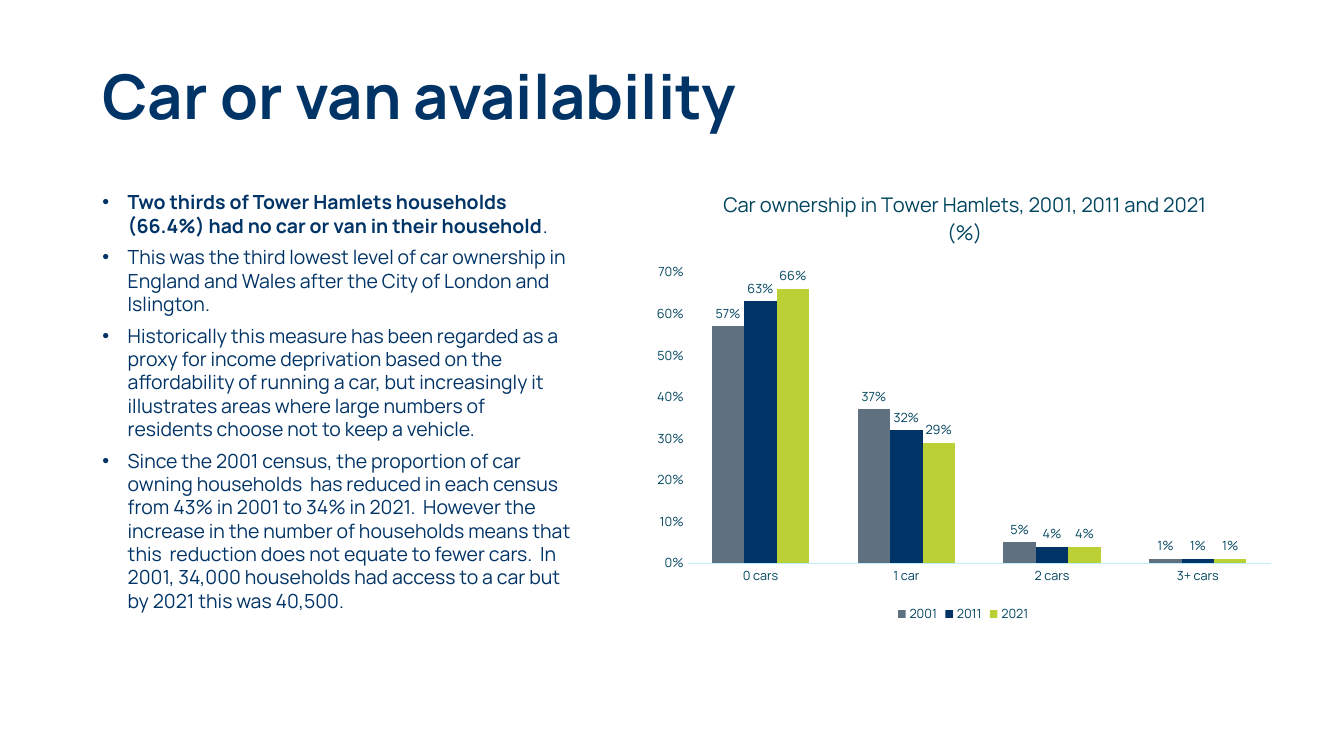
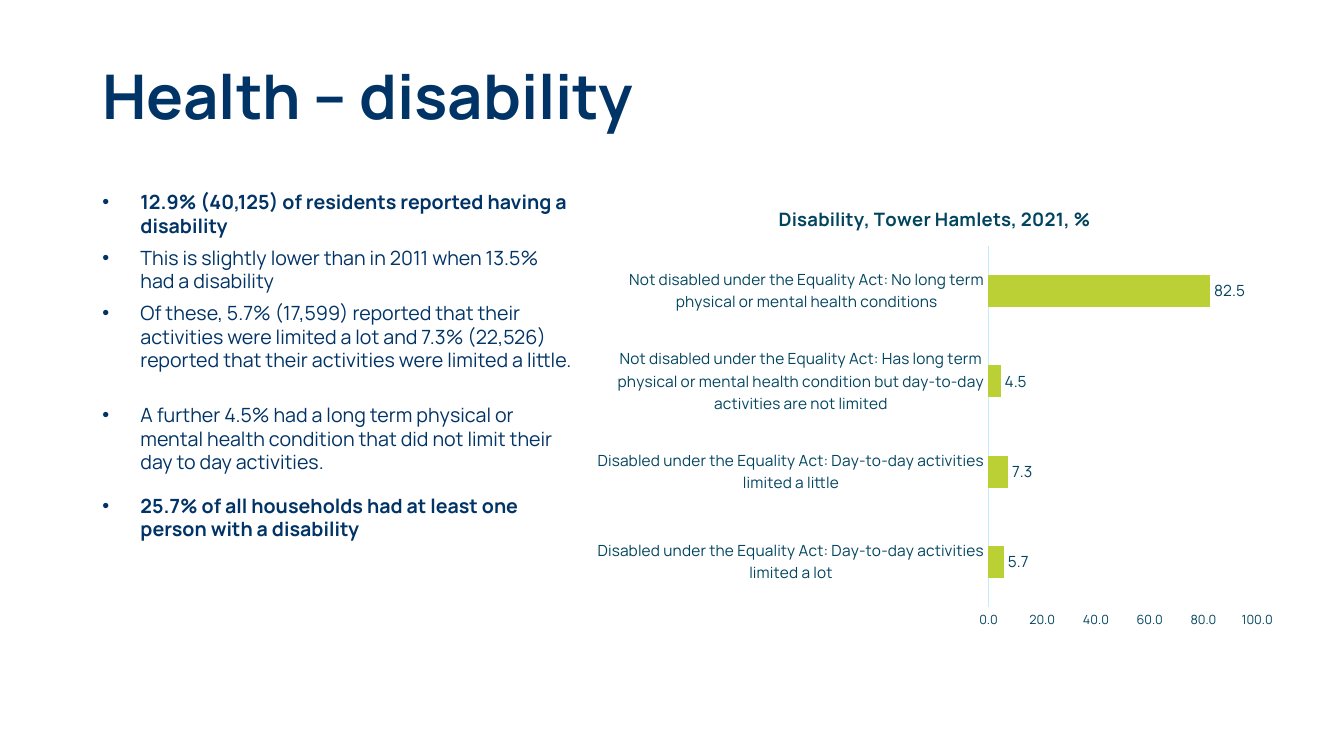
from dataclasses import dataclass

from lxml.etree import SubElement
from pptx import Presentation
from pptx.chart.data import CategoryChartData
from pptx.dml.color import RGBColor
from pptx.enum.chart import XL_CHART_TYPE, XL_LABEL_POSITION, XL_LEGEND_POSITION, XL_TICK_MARK
from pptx.enum.text import MSO_ANCHOR, MSO_AUTO_SIZE, PP_ALIGN
from pptx.oxml import parse_xml
from pptx.oxml.ns import nsdecls, qn
from pptx.util import Cm, Pt

FONT = "Manrope"
COLOURS = {
    "navy": "003366",
    "teal": "00445E",
    "pale": "C1EEFF",
    "grey": "5F7180",
    "lime": "BBD034",
}


@dataclass(frozen=True)
class Span:
    text: str
    bold: bool = False


@dataclass(frozen=True)
class Bullet:
    spans: tuple[Span, ...]
    before: float = 6
    after: float = 0


@dataclass(frozen=True)
class BulletList:
    bullets: tuple[Bullet, ...]
    size: float
    indent: float


@dataclass(frozen=True)
class Series:
    name: str
    values: tuple[float, ...]
    colour: str


@dataclass(frozen=True)
class ChartPanel:
    kind: XL_CHART_TYPE
    place: tuple[float, float, float, float]
    title: str
    title_size: float
    title_bold: bool
    title_corner: tuple[float, float]
    plot_area: tuple[float, float, float, float]
    categories: tuple[str, ...]
    series: tuple[Series, ...]
    number_format: str
    maximum: float
    step: float
    gap: int
    label_size: float
    category_size: float
    has_legend: bool = False


@dataclass(frozen=True)
class Page:
    title: str
    body: BulletList
    panel: ChartPanel


PAGES = (
    Page(
        "Car or van availability",
        BulletList(
            (
                Bullet((
                    Span("Two thirds of Tower Hamlets households (66.4%) had no car or van in their household", True),
                    Span("."),
                ), before=0),
                Bullet((Span("This was the third lowest level of car ownership in England and Wales after "
                             "the City of London and Islington."),)),
                Bullet((Span("Historically this measure has been regarded as a proxy for income deprivation "
                             "based on the affordability of running a car, but increasingly it illustrates "
                             "areas where large numbers of residents choose not to keep a vehicle."),)),
                Bullet((Span("Since the 2001 census, the proportion of car owning households  has reduced in "
                             "each census from 43% in 2001 to 34% in 2021.  However the increase in the number "
                             "of households means that this  reduction does not equate to fewer cars.  In 2001, "
                             "34,000 households had access to a car but by 2021 this was 40,500."),)),
            ),
            size=13.9,
            indent=0.64,
        ),
        ChartPanel(
            kind=XL_CHART_TYPE.COLUMN_CLUSTERED,
            place=(16.2, 4.34, 16.15, 11.46),
            title="Car ownership in Tower Hamlets, 2001, 2011 and 2021 (%)",
            title_size=14.4,
            title_bold=False,
            title_corner=(0.12, 0.03),
            plot_area=(0.07, 0.22, 0.91, 0.64),
            categories=("0 cars", "1 car", "2 cars", "3+ cars"),
            series=(
                Series("2001", (0.57, 0.37, 0.05, 0.01), "grey"),
                Series("2011", (0.63, 0.32, 0.04, 0.01), "navy"),
                Series("2021", (0.66, 0.29, 0.04, 0.01), "lime"),
            ),
            number_format="0%",
            maximum=0.7,
            step=0.1,
            gap=150,
            label_size=9,
            category_size=9,
            has_legend=True,
        ),
    ),
    Page(
        "Health – disability",
        BulletList(
            (
                Bullet((Span("12.9% (40,125) of residents reported having a disability", True),), before=0),
                Bullet((Span("This is slightly lower than in 2011 when 13.5% had a disability"),)),
                Bullet((Span("Of these, 5.7% (17,599) reported that their activities were limited a lot and "
                             "7.3% (22,526) reported that their activities were limited a little."),)),
                Bullet((Span("A further 4.5% had a long term physical or mental health condition that did "
                             "not limit their day to day activities."),), before=22.5, after=8),
                Bullet((Span("25.7% of all households had at least one person with a disability", True),)),
            ),
            size=14,
            indent=0.96,
        ),
        ChartPanel(
            kind=XL_CHART_TYPE.BAR_CLUSTERED,
            place=(14.7, 4.67, 17.73, 11.38),
            title="Disability, Tower Hamlets, 2021, %",
            title_size=13.2,
            title_bold=True,
            title_corner=(0.273, 0.034),
            plot_area=(0.576, 0.134, 0.382, 0.8),
            categories=(
                "Disabled under the Equality Act: Day-to-day activities limited a lot",
                "Disabled under the Equality Act: Day-to-day activities limited a little",
                "Not disabled under the Equality Act: Has long term physical or mental health condition "
                "but day-to-day activities are not limited",
                "Not disabled under the Equality Act: No long term physical or mental health conditions",
            ),
            series=(Series("Series 1", (5.7, 7.3, 4.5, 82.5), "lime"),),
            number_format="#,##0.0",
            maximum=100,
            step=20,
            gap=182,
            label_size=11,
            category_size=11,
        ),
    ),
)


def colour(name: str) -> RGBColor:
    return RGBColor.from_string(COLOURS[name])


def style_font(font, size: float, name: str, bold: bool = False) -> None:
    font.name = FONT
    font.size = Pt(size)
    font.bold = bold
    font.color.rgb = colour(name)


def write_title(slide, text: str) -> None:
    title = slide.shapes.title
    title.left, title.top, title.width, title.height = Cm(2.33), Cm(0.66), Cm(27.16), Cm(3.68)
    frame = title.text_frame
    frame.auto_size = MSO_AUTO_SIZE.NONE
    frame.vertical_anchor = MSO_ANCHOR.MIDDLE
    para = frame.paragraphs[0]
    para.alignment = PP_ALIGN.LEFT
    para.line_spacing = 0.9
    span = para.add_run()
    span.text = text
    style_font(span.font, 44, "navy", True)


def write_bullets(slide, body: BulletList) -> None:
    box = slide.shapes.add_textbox(Cm(2.33), Cm(4.67), Cm(12.37), Cm(12.42))
    frame = box.text_frame
    frame.word_wrap = True
    for index, bullet in enumerate(body.bullets):
        para = frame.add_paragraph() if index else frame.paragraphs[0]
        properties = para._p.get_or_add_pPr()
        properties.set("marL", str(Cm(body.indent)))
        properties.set("indent", str(-Cm(body.indent)))
        SubElement(properties, qn("a:buFont")).set("typeface", "Arial")
        SubElement(properties, qn("a:buChar")).set("char", "•")
        para.line_spacing = 1.0
        para.space_before = Pt(bullet.before)
        para.space_after = Pt(bullet.after)
        for part in bullet.spans:
            span = para.add_run()
            span.text = part.text
            style_font(span.font, body.size, "navy", part.bold)


def manual_layout(values: tuple[float, ...], inner: bool = False):
    target = '<c:layoutTarget val="inner"/>' if inner else ""
    modes = "".join(f'<c:{axis}Mode val="edge"/>' for axis in "xy")
    sizes = "".join(f'<c:{key} val="{value}"/>' for key, value in zip("xywh", values))
    return parse_xml(
        f'<c:layout {nsdecls("c")}><c:manualLayout>{target}{modes}{sizes}</c:manualLayout></c:layout>'
    )


def place_chart_part(element, layout, position: int) -> None:
    for existing in element.findall(qn("c:layout")):
        element.remove(existing)
    element.insert(position, layout)


def draw_chart(slide, panel: ChartPanel) -> None:
    data = CategoryChartData(number_format=panel.number_format)
    data.categories = panel.categories
    for series in panel.series:
        data.add_series(series.name, series.values)
    chart = slide.shapes.add_chart(panel.kind, *map(Cm, panel.place), data).chart
    style_font(chart.font, panel.label_size, "teal")

    chart.has_title = True
    para = chart.chart_title.text_frame.paragraphs[0]
    span = para.add_run()
    span.text = panel.title
    style_font(span.font, panel.title_size, "teal", panel.title_bold)
    place_chart_part(chart.chart_title._element, manual_layout(panel.title_corner), 1)
    plot_area = chart._chartSpace.chart.plotArea
    place_chart_part(plot_area, manual_layout(panel.plot_area, True), 0)

    chart.has_legend = panel.has_legend
    if panel.has_legend:
        chart.legend.position = XL_LEGEND_POSITION.BOTTOM
        chart.legend.include_in_layout = False
        style_font(chart.legend.font, 9, "teal")

    for axis, size in ((chart.category_axis, panel.category_size), (chart.value_axis, 9)):
        axis.has_major_gridlines = False
        axis.major_tick_mark = XL_TICK_MARK.NONE
        axis.minor_tick_mark = XL_TICK_MARK.NONE
        style_font(axis.tick_labels.font, size, "teal")
    chart.category_axis.format.line.color.rgb = colour("pale")
    chart.category_axis.format.line.width = Pt(0.75)
    values = chart.value_axis
    values.format.line.fill.background()
    values.minimum_scale = 0
    values.maximum_scale = panel.maximum
    values.major_unit = panel.step
    values.tick_labels.number_format = panel.number_format
    values.tick_labels.number_format_is_linked = False

    plot = chart.plots[0]
    plot.vary_by_categories = False
    plot.gap_width = panel.gap
    plot.overlap = 0
    for drawn, series in zip(plot.series, panel.series):
        drawn.format.fill.solid()
        drawn.format.fill.fore_color.rgb = colour(series.colour)
        labels = drawn.data_labels
        labels.show_value = True
        labels.position = XL_LABEL_POSITION.OUTSIDE_END
        labels.number_format = panel.number_format
        labels.number_format_is_linked = False
        style_font(labels.font, panel.label_size, "teal")


def main() -> None:
    deck = Presentation()
    deck.slide_width, deck.slide_height = Cm(33.87), Cm(19.05)
    for page in PAGES:
        slide = deck.slides.add_slide(deck.slide_layouts[5])
        write_title(slide, page.title)
        write_bullets(slide, page.body)
        draw_chart(slide, page.panel)
    deck.save("out.pptx")


if __name__ == "__main__":
    main()
